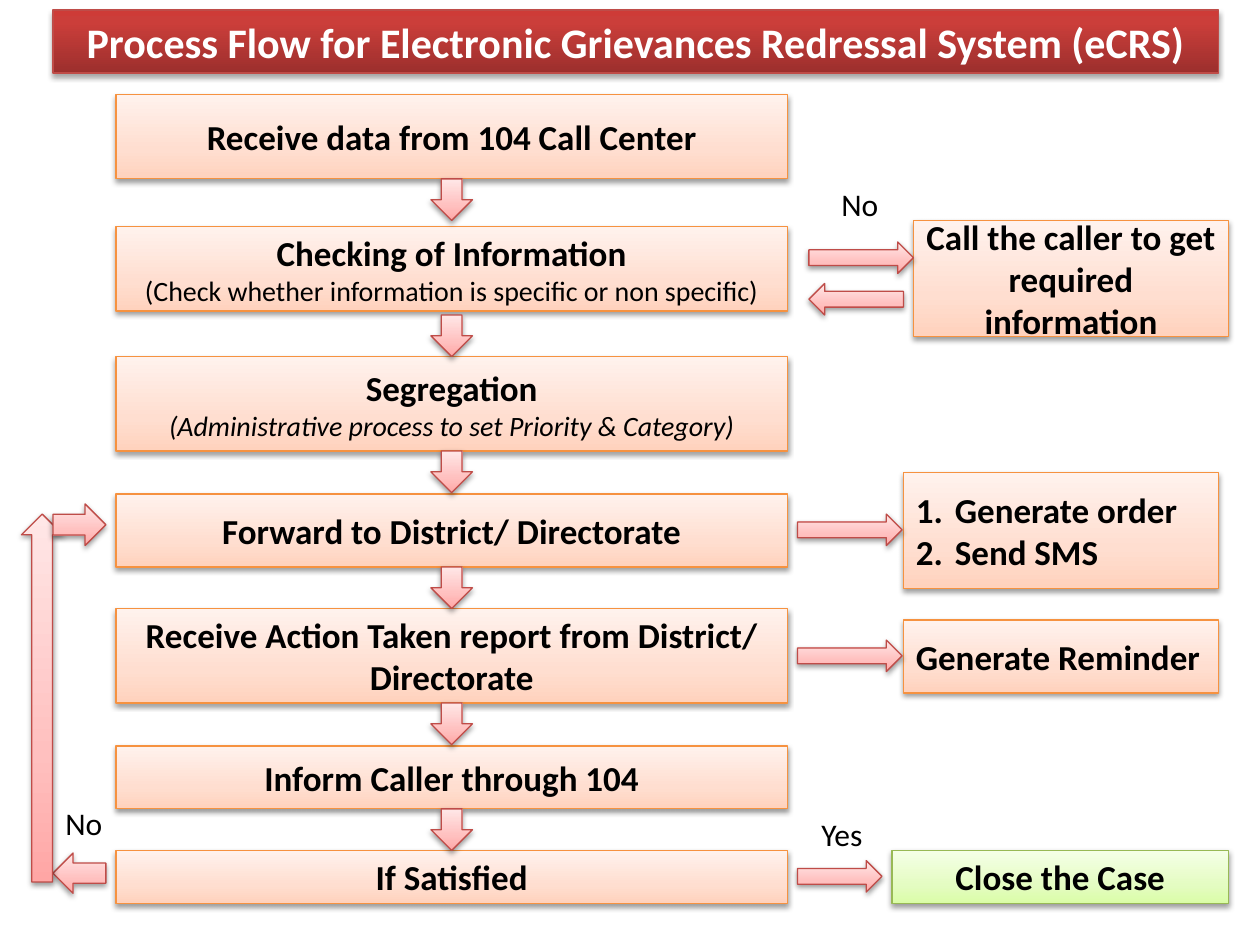
from dataclasses import dataclass
from typing import Any

from lxml import etree
from pptx import Presentation
from pptx import util as u
from pptx.dml.color import RGBColor
from pptx.enum import shapes, text
from pptx.oxml.ns import qn

SHAPE = shapes.MSO_SHAPE
CENTER, LEFT = text.PP_ALIGN.CENTER, text.PP_ALIGN.LEFT
BLACK, WHITE = RGBColor(0, 0, 0), RGBColor(255, 255, 255)
FONT = "Calibri"
HANG = 0.31


@dataclass(frozen=True)
class Look:
    """Gradient stops run from bottom to top; mid is the place of the second."""
    low: RGBColor
    core: RGBColor
    high: RGBColor
    line: RGBColor
    mid: int = 35
    shade: int = 38
    drop: float = 1.6


RED = Look(RGBColor(0x9C, 0x2F, 0x2D), RGBColor(0xCB, 0x3E, 0x3A),
           RGBColor(0xCE, 0x3B, 0x37), RGBColor(0xBF, 0x4C, 0x48), 80, 35, 1.8)
PEACH = Look(RGBColor(0xFF, 0xD2, 0xBD), RGBColor(0xFF, 0xDE, 0xD0),
             RGBColor(0xFF, 0xF2, 0xED), RGBColor(0xF6, 0x92, 0x40))
PINK = Look(RGBColor(0xFF, 0xA6, 0xA5), RGBColor(0xFF, 0xC0, 0xBF),
            RGBColor(0xFF, 0xE7, 0xE7), RGBColor(0xBF, 0x4C, 0x48))
GREEN = Look(RGBColor(0xDA, 0xFD, 0xA7), RGBColor(0xE4, 0xFC, 0xC2),
             RGBColor(0xF5, 0xFF, 0xE7), RGBColor(0x98, 0xB9, 0x55))


@dataclass(frozen=True)
class Line:
    text: str
    size: int = 20
    bold: bool = True
    slant: bool = False
    align: Any = CENTER
    hang: bool = False
    count: bool = False


@dataclass(frozen=True)
class Box:
    left: float
    top: float
    width: float
    height: float
    lines: tuple[Line, ...]
    look: Look = PEACH


@dataclass(frozen=True)
class Arrow:
    kind: Any
    left: float
    top: float
    width: float
    height: float


@dataclass(frozen=True)
class Label:
    text: str
    left: float
    top: float
    width: float = 0.5


def step(top: float, height: float, *lines: Line) -> Box:
    return Box(0.92, top, 5.33, height, lines)


def item(words: str, count: bool = False) -> Line:
    return Line(words, align=LEFT, hang=True, count=count)


STEPS = (
    step(0.75, 0.67, Line("Receive data from 104 Call Center")),
    step(1.8, 0.67, Line("Checking of Information"),
         Line("(Check whether information is specific or non specific)", 16, False)),
    step(2.83, 0.75, Line("Segregation"),
         Line("(Administrative process to set Priority & Category)", 16, False, True)),
    step(3.92, 0.58, Line("Forward to District/ Directorate")),
    step(4.83, 0.75, Line("Receive Action Taken report from District/ Directorate")),
    step(5.92, 0.5, Line("Inform Caller through 104")),
    step(6.75, 0.42, Line("If Satisfied")),
)
SIDES = (
    Box(7.25, 1.75, 2.5, 0.92, (Line("Call the caller to get required information"),)),
    Box(7.17, 3.75, 2.5, 0.92, (item("Generate order", True), item("Send SMS", True))),
    Box(7.17, 4.92, 2.5, 0.58, (item("Generate Reminder"),)),
    Box(7.08, 6.75, 2.67, 0.42, (Line("Close the Case"),), GREEN),
)
DOWNS = tuple(Arrow(SHAPE.DOWN_ARROW, 3.42, top, 0.33, 0.33)
              for top in (1.42, 2.5, 3.58, 4.5, 5.58, 6.42))
LINKS = (
    Arrow(SHAPE.RIGHT_ARROW, 6.42, 1.92, 0.83, 0.25),
    Arrow(SHAPE.LEFT_ARROW, 6.42, 2.25, 0.75, 0.25),
    Arrow(SHAPE.RIGHT_ARROW, 6.33, 4.08, 0.83, 0.25),
    Arrow(SHAPE.RIGHT_ARROW, 6.33, 5.08, 0.83, 0.25),
    Arrow(SHAPE.RIGHT_ARROW, 6.33, 6.83, 0.67, 0.25),
)
LOOP = (
    Arrow(SHAPE.LEFT_ARROW, 0.42, 6.77, 0.42, 0.32),
    Arrow(SHAPE.UP_ARROW, 0.17, 4.08, 0.33, 2.92),
    Arrow(SHAPE.RIGHT_ARROW, 0.42, 4, 0.42, 0.33),
)
LABELS = (Label("No", 0.42, 6.33), Label("No", 6.58, 1.42),
          Label("Yes", 6.42, 6.42, 0.58))


def sub(node: Any, tag: str, **attrs: Any) -> Any:
    return etree.SubElement(node, qn(tag), {k: str(v) for k, v in attrs.items()})


def place(shape: Any, *rect: float) -> None:
    shape.left, shape.top, shape.width, shape.height = map(u.Inches, rect)


def paint(shape: Any, look: Look) -> None:
    """Give the shape its gradient, outline and soft shadow."""
    shape.fill.gradient()
    shape.fill.gradient_angle = 90
    props = shape._element.spPr
    stops = props.find(qn("a:gradFill")).find(qn("a:gsLst"))
    for stop in list(stops):
        stops.remove(stop)
    for pos, color in ((0, look.low), (look.mid, look.core), (100, look.high)):
        sub(sub(stops, "a:gs", pos=pos * 1000), "a:srgbClr", val=color)
    shape.line.color.rgb = look.line
    shape.line.width = u.Pt(0.75)
    shape.shadow.inherit = False
    cast = sub(props.find(qn("a:effectLst")), "a:outerShdw", blurRad=u.Pt(3.1),
               dist=u.Pt(look.drop), dir=90 * 60000, rotWithShape=0)
    sub(sub(cast, "a:srgbClr", val=BLACK), "a:alpha", val=look.shade * 1000)


def write(frame: Any, lines: tuple[Line, ...], color: RGBColor = BLACK) -> None:
    frame.word_wrap = True
    for i, line in enumerate(lines):
        para = frame.add_paragraph() if i else frame.paragraphs[0]
        para.text = line.text
        para.alignment = line.align
        props = para._p.get_or_add_pPr()
        if line.hang:
            props.set("marL", str(u.Inches(HANG)))
            props.set("indent", str(-u.Inches(HANG)))
        if line.count:
            sub(props, "a:buFont", typeface="+mj-lt")
            sub(props, "a:buAutoNum", type="arabicPeriod")
        font = para.font
        font.name, font.size, font.bold = FONT, u.Pt(line.size), line.bold
        font.italic = line.slant
        font.color.rgb = color


def draw_head(slide: Any) -> None:
    head = slide.shapes.title
    place(head, 0.42, 0.08, 9.25, 0.5)
    paint(head, RED)
    frame = head.text_frame
    frame.vertical_anchor = text.MSO_ANCHOR.MIDDLE
    frame.auto_size = text.MSO_AUTO_SIZE.NONE
    write(frame, (Line("Process Flow for Electronic Grievances Redressal System (eCRS)",
                       24),), WHITE)


def draw_box(slide: Any, box: Box) -> None:
    shape = slide.shapes.add_shape(SHAPE.RECTANGLE, 0, 0, 0, 0)
    place(shape, box.left, box.top, box.width, box.height)
    paint(shape, box.look)
    shape.text_frame.vertical_anchor = text.MSO_ANCHOR.MIDDLE
    write(shape.text_frame, box.lines)


def draw_arrow(slide: Any, arrow: Arrow) -> None:
    shape = slide.shapes.add_shape(arrow.kind, 0, 0, 0, 0)
    place(shape, arrow.left, arrow.top, arrow.width, arrow.height)
    paint(shape, PINK)


def draw_label(slide: Any, label: Label) -> None:
    shape = slide.shapes.add_textbox(0, 0, 0, 0)
    place(shape, label.left, label.top, label.width, 0.4)
    write(shape.text_frame, (Line(label.text, 18, False, align=LEFT),))


def main() -> None:
    deck = Presentation()
    deck.slide_width, deck.slide_height = u.Inches(10), u.Inches(7.5)
    slide = deck.slides.add_slide(deck.slide_layouts[5])
    draw_head(slide)
    for box in STEPS + SIDES:
        draw_box(slide, box)
    for arrow in DOWNS + LINKS + LOOP:
        draw_arrow(slide, arrow)
    for label in LABELS:
        draw_label(slide, label)
    deck.save("out.pptx")


if __name__ == "__main__":
    main()
